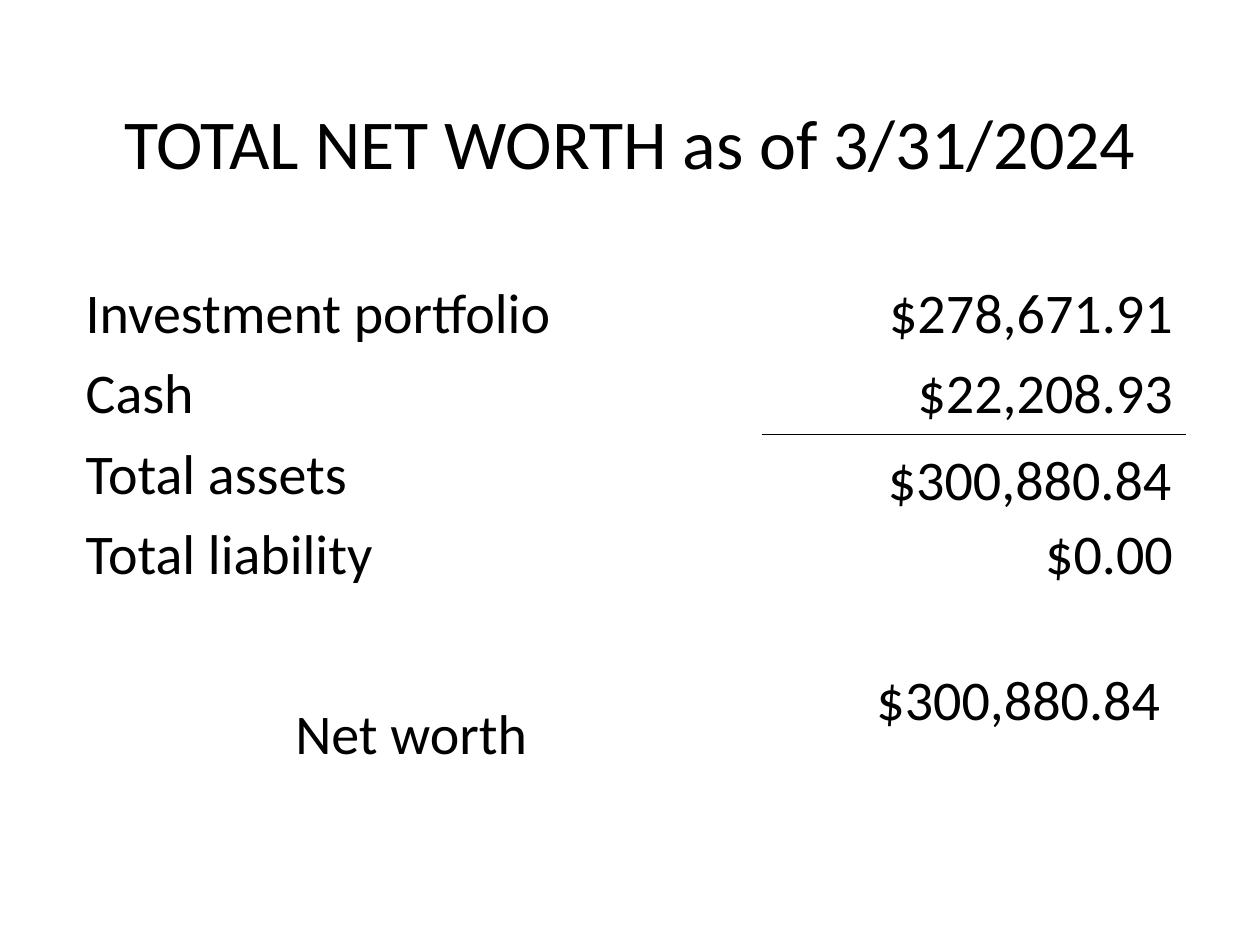
from dataclasses import dataclass

from lxml import etree
from pptx import Presentation
from pptx.dml.color import RGBColor
from pptx.enum.text import MSO_ANCHOR, PP_ALIGN
from pptx.oxml.ns import qn
from pptx.util import Inches, Pt

LEFT, MID, RIGHT = PP_ALIGN.LEFT, PP_ALIGN.CENTER, PP_ALIGN.RIGHT
CENTER, BOTTOM = MSO_ANCHOR.MIDDLE, MSO_ANCHOR.BOTTOM
FONT, BLACK, WHITE = "Calibri", "000000", "FFFFFF"
PAD = (0.1, 0.05, 0.1, 0.05)
COLS = (5.47, 3.36)
ROW, LAST = 0.64, 2.21


@dataclass
class Entry:
    label: str
    amount: str
    align: PP_ALIGN = LEFT
    anchor: MSO_ANCHOR = CENTER
    pad: tuple = PAD
    edge: str = ""


ENTRIES = [
    Entry("Investment portfolio", "$278,671.91"),
    Entry("Cash", "$22,208.93", edge="a:lnB"),
    Entry("Total assets", "$300,880.84 ", anchor=BOTTOM,
          pad=(0.01, 0.01, 0.01, 0), edge="a:lnT"),
    Entry("Total liability", "$0.00"),
    # The deep bottom inset lifts the amount above its label.
    Entry("Net worth ", "$300,880.84 ", align=MID, pad=(0.1, 0.05, 0.1, 0.59)),
]


def color(code: str) -> RGBColor:
    return RGBColor.from_string(code)


def write(frame, text: str, size: int, align: PP_ALIGN) -> None:
    para = frame.paragraphs[0]
    para.alignment = align
    run = para.add_run()
    run.text = text
    run.font.name = FONT
    run.font.size = Pt(size)
    run.font.color.rgb = color(BLACK)


def rule(cell, edge: str) -> None:
    """Draw a thin black border on one edge of a cell."""
    line = etree.Element(qn(edge), w=str(Pt(1)))
    fill = etree.SubElement(line, qn("a:solidFill"))
    etree.SubElement(fill, qn("a:srgbClr"), val=BLACK)
    cell._tc.get_or_add_tcPr().insert(0, line)


def fill_cell(cell, text: str, align: PP_ALIGN,
              anchor: MSO_ANCHOR = CENTER, pad: tuple = PAD) -> None:
    cell.fill.solid()
    cell.fill.fore_color.rgb = color(WHITE)
    cell.vertical_anchor = anchor
    (cell.margin_left, cell.margin_top,
     cell.margin_right, cell.margin_bottom) = map(Inches, pad)
    write(cell.text_frame, text, 32, align)


def add_title(slide, text: str) -> None:
    box = slide.shapes.add_textbox(Inches(0.75), Inches(0.5), Inches(8.5), Inches(1.25))
    frame = box.text_frame
    frame.word_wrap = True
    frame.vertical_anchor = CENTER
    write(frame, text, 40, MID)


def add_sheet(slide, entries: list[Entry]) -> None:
    high = ROW * (len(entries) - 1) + LAST
    table = slide.shapes.add_table(
        len(entries), len(COLS), Inches(0.58), Inches(2.17),
        Inches(sum(COLS)), Inches(high)).table
    table.first_row = table.horz_banding = False
    for col, wide in zip(table.columns, COLS):
        col.width = Inches(wide)
    for num, entry in enumerate(entries):
        table.rows[num].height = Inches(LAST if entry is entries[-1] else ROW)
        fill_cell(table.cell(num, 0), entry.label, entry.align)
        cell = table.cell(num, 1)
        fill_cell(cell, entry.amount, RIGHT, entry.anchor, entry.pad)
        if entry.edge:
            rule(cell, entry.edge)


def main() -> None:
    deck = Presentation()
    deck.slide_width, deck.slide_height = Inches(10), Inches(7.5)
    slide = deck.slides.add_slide(deck.slide_layouts[6])
    add_title(slide, "TOTAL NET WORTH as of 3/31/2024")
    add_sheet(slide, ENTRIES)
    deck.save("out.pptx")


if __name__ == "__main__":
    main()
